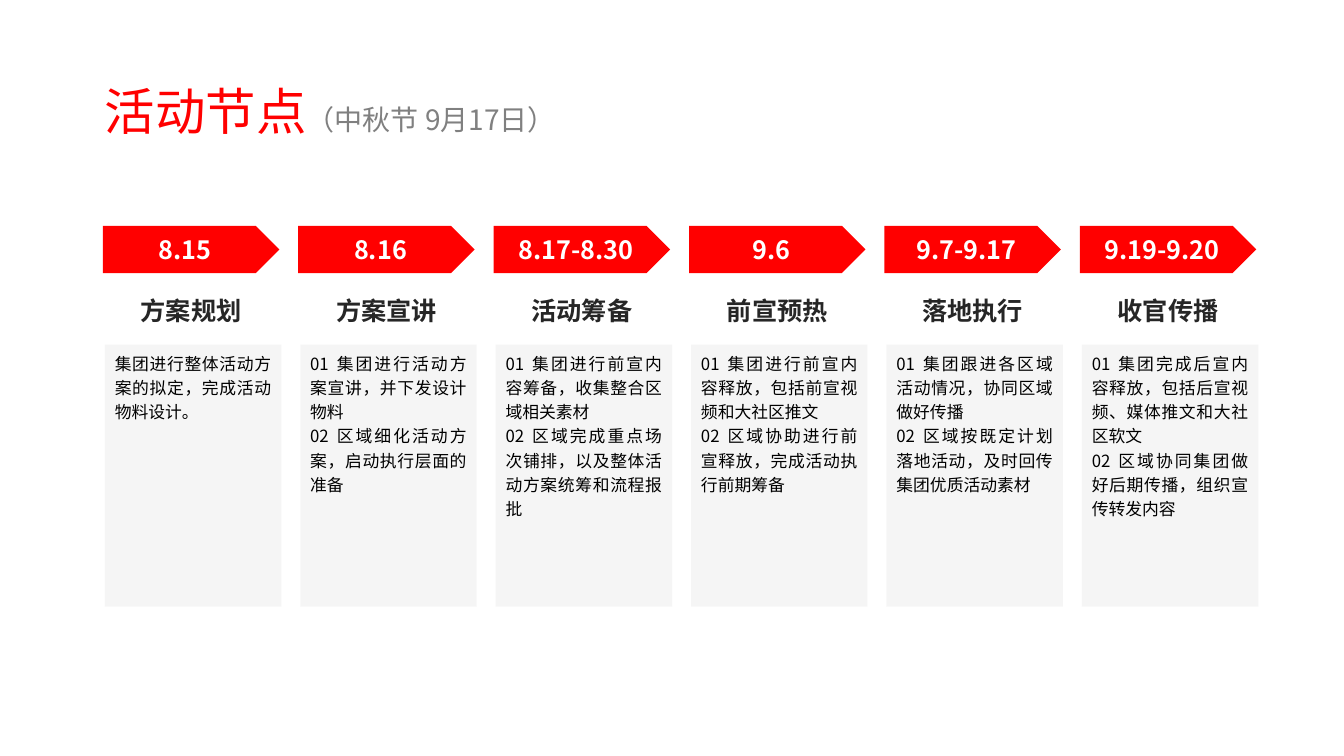
import dataclasses

import lxml.etree
import pptx
import pptx.dml.color
import pptx.enum.shapes
import pptx.enum.text
import pptx.oxml.ns
import pptx.util

Inches = pptx.util.Inches
Align = pptx.enum.text.PP_ALIGN
Anchor = pptx.enum.text.MSO_ANCHOR
Preset = pptx.enum.shapes.MSO_SHAPE


@dataclasses.dataclass(frozen=True)
class Theme:
    """Colours, type sizes and font of the slide."""

    font: str = "Noto Sans CJK SC"
    red: str = "FF0000"
    white: str = "FFFFFF"
    gray: str = "808080"
    dark: str = "262626"
    black: str = "000000"
    panel: str = "F2F2F2"
    panel_opacity: int = 70
    title_size: int = 36
    subtitle_size: int = 20
    heading_size: int = 18
    body_size: int = 12
    line_spacing: float = 1.2


THEME = Theme()
LEFT, PITCH, WIDTH = 1.02, 1.938, 1.75
PANEL_OFFSET = 0.02

STAGES = [
    ("8.15", "方案规划", ["集团进行整体活动方案的拟定，完成活动物料设计。"]),
    ("8.16", "方案宣讲", [
        "01 集团进行活动方案宣讲，并下发设计物料",
        "02 区域细化活动方案，启动执行层面的准备",
    ]),
    ("8.17-8.30", "活动筹备", [
        "01 集团进行前宣内容筹备，收集整合区域相关素材",
        "02 区域完成重点场次铺排，以及整体活动方案统筹和流程报批",
    ]),
    ("9.6", "前宣预热", [
        "01 集团进行前宣内容释放，包括前宣视频和大社区推文",
        "02 区域协助进行前宣释放，完成活动执行前期筹备",
    ]),
    ("9.7-9.17", "落地执行", [
        "01 集团跟进各区域活动情况，协同区域做好传播",
        "02 区域按既定计划落地活动，及时回传集团优质活动素材",
    ]),
    ("9.19-9.20", "收官传播", [
        "01 集团完成后宣内容释放，包括后宣视频、媒体推文和大社区软文",
        "02 区域协同集团做好后期传播，组织宣传转发内容",
    ]),
]


def add_run(paragraph, text, size, color, bold=False):
    """Append a run in the theme font, for Latin and East Asian text alike."""
    run = paragraph.add_run()
    run.text = text
    run.font.size = pptx.util.Pt(size)
    run.font.bold = bold
    run.font.name = THEME.font
    run.font.color.rgb = pptx.dml.color.RGBColor.from_string(color)
    east_asian = lxml.etree.SubElement(run.font._element, pptx.oxml.ns.qn("a:ea"))
    east_asian.set("typeface", THEME.font)


def add_text_box(slide, left, top, width, height):
    """Add a wrapping text box and return its text frame."""
    box = slide.shapes.add_textbox(Inches(left), Inches(top), Inches(width), Inches(height))
    box.text_frame.word_wrap = True
    return box.text_frame


def add_block(slide, preset, left, top, height, color):
    """Add a flat, unlined shape one column wide."""
    shape = slide.shapes.add_shape(preset, Inches(left), Inches(top), Inches(WIDTH), Inches(height))
    shape.shadow.inherit = False
    shape.fill.solid()
    shape.fill.fore_color.rgb = pptx.dml.color.RGBColor.from_string(color)
    shape.line.fill.background()
    shape.text_frame.word_wrap = True
    return shape


def add_title(slide):
    """Add the title with its smaller gray date."""
    frame = add_text_box(slide, 0.96, 0.68, 11.42, 0.71)
    frame.vertical_anchor = Anchor.BOTTOM
    frame.margin_left = frame.margin_right = Inches(0.08)
    frame.margin_top = frame.margin_bottom = Inches(0)
    paragraph = frame.paragraphs[0]
    paragraph.line_spacing = THEME.line_spacing
    add_run(paragraph, "活动节点", THEME.title_size, THEME.red)
    add_run(paragraph, "（中秋节 9月17日）", THEME.subtitle_size, THEME.gray)


def add_date_arrow(slide, left, date):
    """Add the red arrow that carries a stage's date."""
    arrow = add_block(slide, Preset.PENTAGON, left, 2.24, 0.47, THEME.red)
    arrow.text_frame.vertical_anchor = Anchor.MIDDLE
    paragraph = arrow.text_frame.paragraphs[0]
    paragraph.alignment = Align.CENTER
    add_run(paragraph, date, THEME.heading_size, THEME.white, bold=True)


def add_panel(slide, left, lines):
    """Add the translucent panel that describes a stage."""
    panel = add_block(slide, Preset.RECTANGLE, left, 3.42, 2.6, THEME.panel)
    color = panel._element.spPr.find(".//" + pptx.oxml.ns.qn("a:srgbClr"))
    alpha = lxml.etree.SubElement(color, pptx.oxml.ns.qn("a:alpha"))
    alpha.set("val", str(THEME.panel_opacity * 1000))
    frame = panel.text_frame
    frame.vertical_anchor = Anchor.TOP
    for index, line in enumerate(lines):
        paragraph = frame.add_paragraph() if index else frame.paragraphs[0]
        paragraph.alignment = Align.JUSTIFY
        paragraph.line_spacing = THEME.line_spacing
        add_run(paragraph, line, THEME.body_size, THEME.black)


def add_heading(slide, left, heading):
    """Add a stage's name between its arrow and its panel."""
    frame = add_text_box(slide, left, 2.88, WIDTH, 0.4)
    frame.auto_size = pptx.enum.text.MSO_AUTO_SIZE.SHAPE_TO_FIT_TEXT
    paragraph = frame.paragraphs[0]
    paragraph.alignment = Align.CENTER
    add_run(paragraph, heading, THEME.heading_size, THEME.dark, bold=True)


def main():
    """Build the timeline slide and save it."""
    presentation = pptx.Presentation()
    presentation.slide_width = Inches(13.33)
    presentation.slide_height = Inches(7.5)
    slide = presentation.slides.add_slide(presentation.slide_layouts[6])
    add_title(slide)
    for index, (date, heading, lines) in enumerate(STAGES):
        left = LEFT + index * PITCH
        add_date_arrow(slide, left, date)
        add_panel(slide, left + PANEL_OFFSET, lines)
        add_heading(slide, left, heading)
    presentation.save("out.pptx")


if __name__ == "__main__":
    main()
